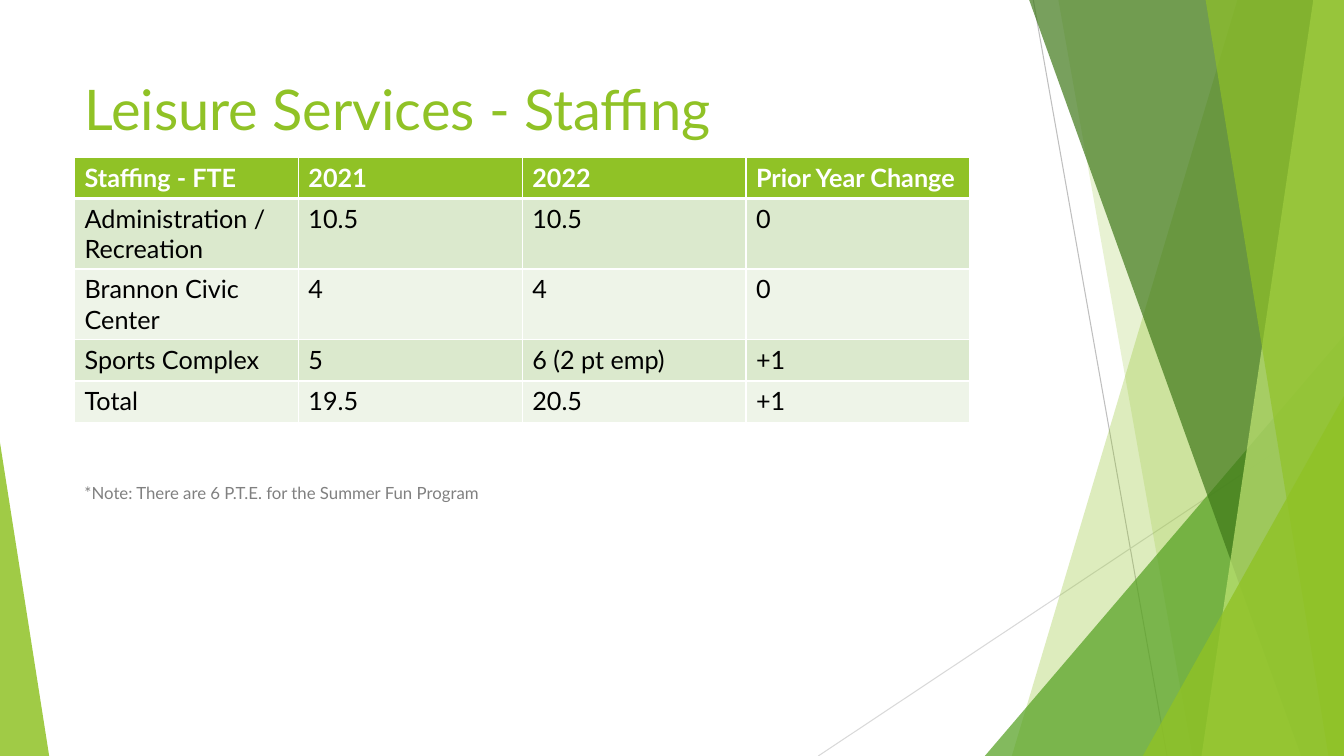
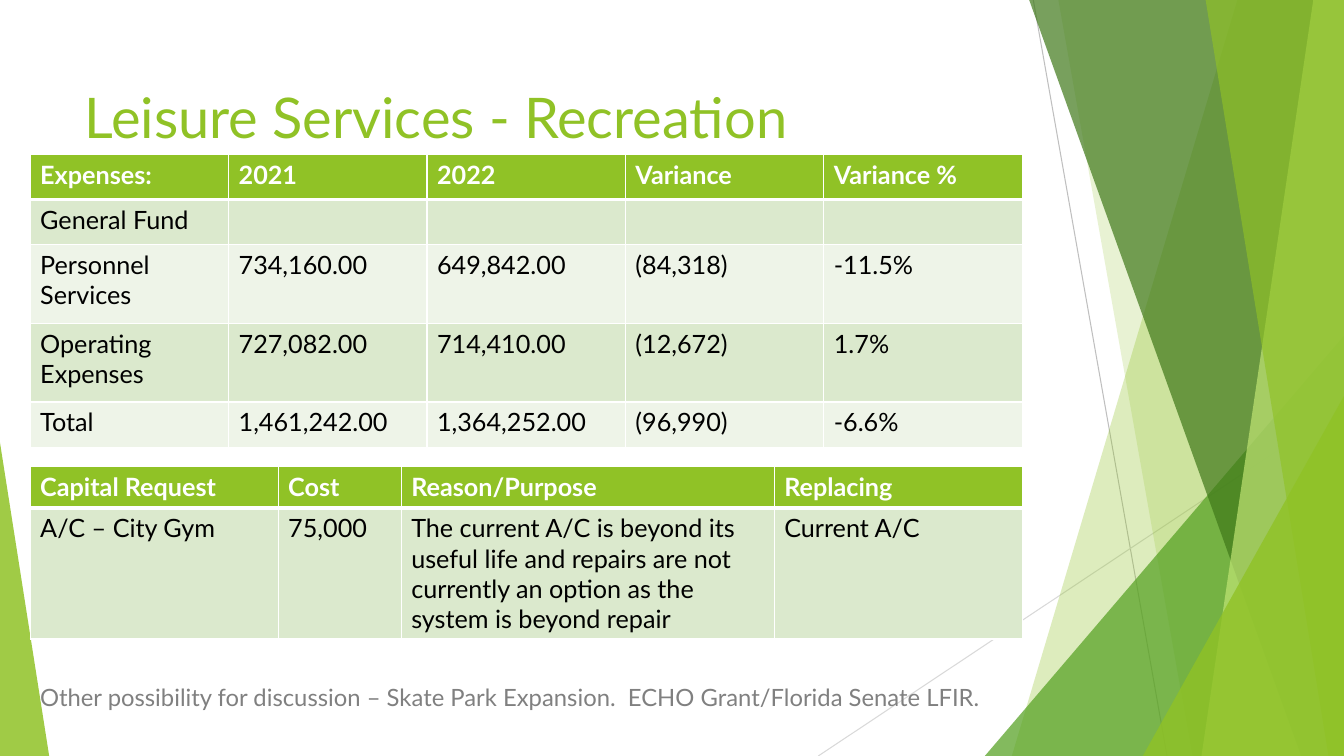
"""Build two leisure services budget slides with a shared faceted green backdrop."""
from dataclasses import dataclass

from lxml import etree
from pptx import Presentation
from pptx import util as u
from pptx.dml.color import RGBColor
from pptx.enum import shapes, text
from pptx.oxml.ns import qn


@dataclass(frozen=True)
class Theme:
    font: str = "Lato"
    green: str = "90C226"
    leaf: str = "54A021"
    forest: str = "3F7819"
    lime: str = "C0E474"
    note: str = "808080"
    white: str = "FFFFFF"
    black: str = "000000"
    bands: tuple = ("DBE9CD", "EEF4E8")
    title_size: int = 40
    table_size: int = 18
    thin: float = 1
    thick: float = 3
    hairline: float = 0.75


THEME = Theme()
WIDTH, HEIGHT = 33.87, 19.05
BLEED = -0.02
LINE_ROW, WRAPPED_ROW = 1.04, 1.78

HAIRLINES = [
    ((26.04, 0), (29.41, HEIGHT), "BFBFBF"),
    ((WIDTH, 10.24), (20.62, HEIGHT), "D9D9D9"),
]
FACETS = [
    ("band", (31.19, 25.5), THEME.green, 30),
    ("band", (26.67, 30.05), THEME.green, 20),
    ("wedge", (24.82, 8.46, WIDTH, 1), THEME.leaf, 72),
    ("band", (25.93, 32.79), THEME.forest, 70),
    ("band", (33.1, 30.28), THEME.lime, 70),
    ("band", (30.38, 33.48), THEME.green, 65),
    ("wedge", (28.8, 9.98, WIDTH, 1), THEME.green, 80),
    ("wedge", (0, 11.15, 1.24, 0), THEME.green, 85),
]

SLIDES = [
    {
        "title": ("Leisure Services - Staffing", (1.88, 1.19, 23.88, 2.51)),
        "note": ("*Note: There are 6 P.T.E. for the Summer Fun Program", (1.88, 12.04, 23.88, 4.22), 12),
        "tables": [
            {
                "at": (1.88, 3.96),
                "columns": [5.64] * 4,
                "rows": [LINE_ROW, WRAPPED_ROW, WRAPPED_ROW, LINE_ROW, LINE_ROW],
                "cells": [
                    ("Staffing - FTE", "2021", "2022", "Prior Year Change"),
                    ("Administration / Recreation", "10.5", "10.5", "0"),
                    ("Brannon Civic Center", "4", "4", "0"),
                    ("Sports Complex", "5", "6 (2 pt emp)", "+1"),
                    ("Total", "19.5", "20.5", "+1"),
                ],
            },
        ],
    },
    {
        "title": ("Leisure Services - Recreation", (1.88, 0.99, 23.88, 2.9)),
        "note": (
            "Other possibility for discussion – Skate Park Expansion.  ECHO Grant/Florida Senate LFIR.",
            (0.76, 17.09, 25, 1.37),
            17,
        ),
        "tables": [
            {
                "at": (0.76, 3.89),
                "columns": [5] * 5,
                "rows": [1.14, 1.14, 1.98, 1.98, 1.14],
                "cells": [
                    ("Expenses:", "2021", "2022", "Variance", "Variance %"),
                    ("General Fund", "", "", "", ""),
                    ("Personnel Services", "734,160.00", "649,842.00", "(84,318)", "-11.5%"),
                    ("Operating Expenses", "727,082.00", "714,410.00", "(12,672)", "1.7%"),
                    ("Total", "1,461,242.00", "1,364,252.00", "(96,990)", "-6.6%"),
                ],
            },
            {
                "at": (0.76, 11.76),
                "columns": [6.25, 3.1, 9.4, 6.25],
                "rows": [LINE_ROW, 3.28],
                "cells": [
                    ("Capital Request", "Cost", "Reason/Purpose", "Replacing"),
                    (
                        "A/C – City Gym",
                        "75,000",
                        "The current A/C is beyond its useful life and repairs are not "
                        "currently an option as the system is beyond repair",
                        "Current A/C",
                    ),
                ],
            },
        ],
    },
]


def cm(*lengths):
    return [u.Cm(length) for length in lengths]


def style_paragraph(paragraph, size, color, bold=False):
    font = paragraph.font
    font.name, font.size, font.bold = THEME.font, u.Pt(size), bold
    font.color.rgb = RGBColor.from_string(color)


def add_text(slide, words, box, size, color, anchor):
    frame = slide.shapes.add_textbox(*cm(*box)).text_frame
    frame.word_wrap = True
    frame.vertical_anchor = anchor
    frame.text = words
    style_paragraph(frame.paragraphs[0], size, color)


def add_hairline(slide, start, end, color):
    line = slide.shapes.add_connector(shapes.MSO_CONNECTOR.STRAIGHT, *cm(*start, *end))
    line.line.color.rgb = RGBColor.from_string(color)
    line.line.width = u.Pt(THEME.hairline)
    etree.SubElement(line.element.spPr, qn("a:effectLst"))


def add_band(slide, top_x, bottom_x):
    builder = slide.shapes.build_freeform(*cm(top_x, BLEED))
    corners = [(WIDTH, BLEED), (WIDTH, HEIGHT), (bottom_x, HEIGHT)]
    builder.add_line_segments([cm(*corner) for corner in corners], close=True)
    return builder.convert_to_shape()


def add_wedge(slide, left, top, right, apex):
    box = cm(left, top, right - left, HEIGHT - top)
    shape = slide.shapes.add_shape(shapes.MSO_SHAPE.ISOSCELES_TRIANGLE, *box)
    shape.adjustments[0] = apex
    return shape


def add_backdrop(slide):
    for hairline in HAIRLINES:
        add_hairline(slide, *hairline)
    builders = {"band": add_band, "wedge": add_wedge}
    for kind, geometry, color, opacity in FACETS:
        shape = builders[kind](slide, *geometry)
        shape.shadow.inherit = False
        shape.line.fill.background()
        shape.fill.solid()
        shape.fill.fore_color.rgb = RGBColor.from_string(color)
        fill_color = shape.element.spPr.find(qn("a:solidFill")).find(qn("a:srgbClr"))
        etree.SubElement(fill_color, qn("a:alpha"), val=str(opacity * 1000))


def add_borders(cell, widths):
    properties = cell._tc.get_or_add_tcPr()
    for edge, width in widths.items():
        border = etree.SubElement(properties, qn(f"a:ln{edge}"), w=str(u.Pt(width)))
        fill = etree.SubElement(border, qn("a:solidFill"))
        etree.SubElement(fill, qn("a:srgbClr"), val=THEME.white)


def style_cell(cell, row_index):
    header = row_index == 0
    top = {"T": THEME.thin} if header else {}
    bottom = THEME.thick if header else THEME.thin
    add_borders(cell, {"L": THEME.thin, "R": THEME.thin, **top, "B": bottom})
    fill = THEME.green if header else THEME.bands[(row_index - 1) % 2]
    cell.fill.solid()
    cell.fill.fore_color.rgb = RGBColor.from_string(fill)
    color = THEME.white if header else THEME.black
    style_paragraph(cell.text_frame.paragraphs[0], THEME.table_size, color, header)


def add_grid(slide, at, columns, rows, cells):
    size = cm(*at, sum(columns), sum(rows))
    table = slide.shapes.add_table(len(rows), len(columns), *size).table
    for column, width in zip(table.columns, columns):
        column.width = u.Cm(width)
    for row_index, (row, height) in enumerate(zip(table.rows, rows)):
        row.height = u.Cm(height)
        for cell, words in zip(row.cells, cells[row_index]):
            cell.text = words
            style_cell(cell, row_index)


def main():
    presentation = Presentation()
    presentation.slide_width, presentation.slide_height = cm(WIDTH, HEIGHT)
    for content in SLIDES:
        slide = presentation.slides.add_slide(presentation.slide_layouts[6])
        add_backdrop(slide)
        add_text(slide, *content["title"], THEME.title_size, THEME.green, text.MSO_ANCHOR.BOTTOM)
        add_text(slide, *content["note"], THEME.note, text.MSO_ANCHOR.TOP)
        for grid in content["tables"]:
            add_grid(slide, **grid)
    presentation.save("out.pptx")


if __name__ == "__main__":
    main()
